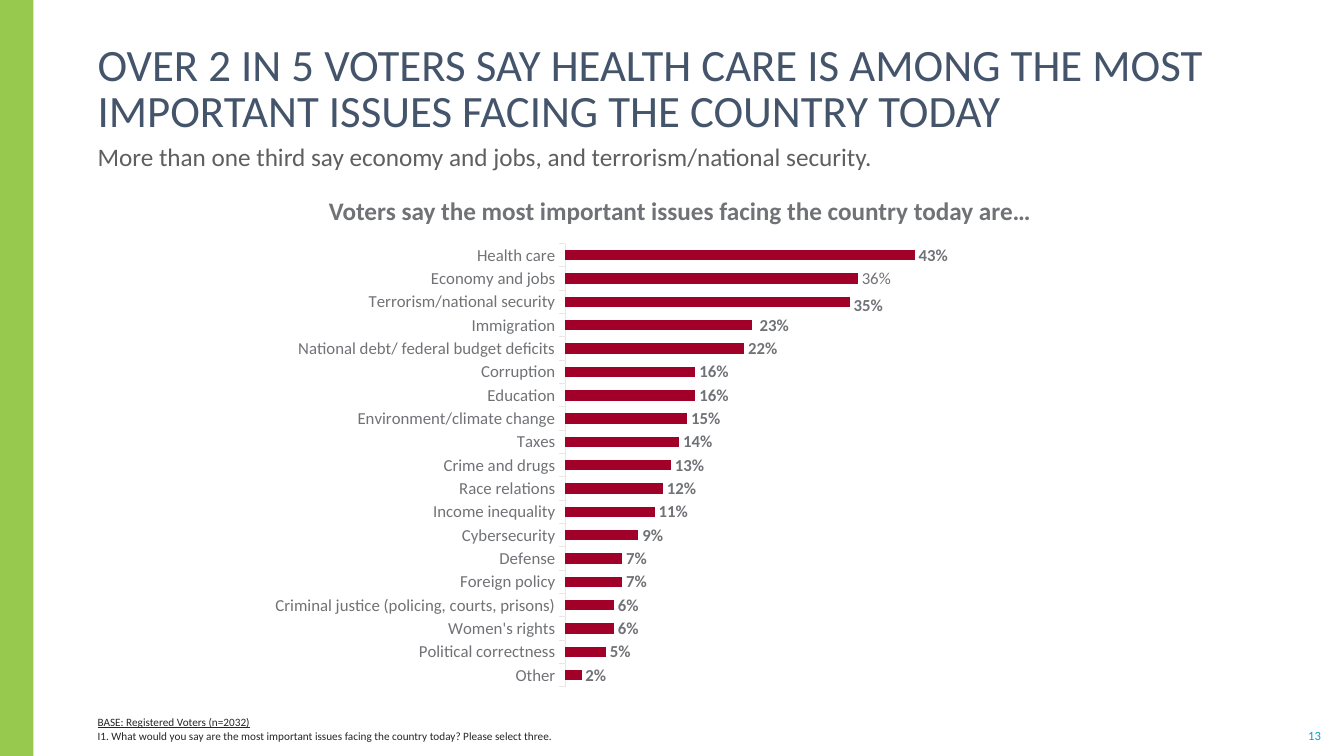
from dataclasses import dataclass

from lxml.etree import SubElement
from pptx import Presentation
from pptx.chart.data import CategoryChartData
from pptx.dml.color import RGBColor
from pptx.enum.chart import (XL_CHART_TYPE as ChartType, XL_LABEL_POSITION as LabelPos,
                             XL_TICK_MARK as TickMark)
from pptx.enum.shapes import MSO_SHAPE as Shape
from pptx.enum.text import MSO_ANCHOR as Anchor, PP_ALIGN as Align
from pptx.oxml.ns import qn
from pptx.util import Cm, Pt


@dataclass(frozen=True)
class Theme:
    font: str = "Calibri"
    band: str = "96C94D"
    title: str = "44546A"
    subtitle: str = "5F5F5F"
    chart_text: str = "707276"
    footnote: str = "262626"
    page: str = "009DD9"
    bar: str = "A10028"
    axis: str = "E7E7E7"
    title_size: float = 32
    body_size: float = 18
    label_size: float = 12
    page_size: float = 9
    footnote_size: float = 8


THEME = Theme()
WIDTH, HEIGHT = 33.87, 19.05
MARGIN, TEXT_WIDTH = 2.21, 30.25

ISSUES = [
    ("Health care", 0.43),
    ("Economy and jobs", 0.36),
    ("Terrorism/national security", 0.35),
    ("Immigration", 0.23),
    ("National debt/ federal budget deficits", 0.22),
    ("Corruption", 0.16),
    ("Education", 0.16),
    ("Environment/climate change", 0.15),
    ("Taxes", 0.14),
    ("Crime and drugs", 0.13),
    ("Race relations", 0.12),
    ("Income inequality", 0.11),
    ("Cybersecurity", 0.09),
    ("Defense", 0.07),
    ("Foreign policy", 0.07),
    ("Criminal justice (policing, courts, prisons)", 0.06),
    ("Women's rights", 0.06),
    ("Political correctness", 0.05),
    ("Other", 0.02),
]


def style_font(font, size, color, bold=False, underline=False):
    font.name = THEME.font
    font.size = Pt(size)
    font.color.rgb = RGBColor.from_string(color)
    font.bold = bold
    if underline:
        font.underline = True


def add_text(slide, box, *lines, size, color, bold=False, underline_first=False, align=Align.LEFT,
             anchor=Anchor.TOP, inset=0.25, spacing=None, space_before=0, wrap=True):
    tf = slide.shapes.add_textbox(*map(Cm, box)).text_frame
    tf.word_wrap = wrap
    tf.vertical_anchor = anchor
    tf.margin_left = tf.margin_right = Cm(inset)
    tf.margin_top = tf.margin_bottom = 0
    for i, line in enumerate(lines):
        p = tf.add_paragraph() if i else tf.paragraphs[0]
        p.alignment = align
        if spacing:
            p.line_spacing = spacing
        if i:
            p.space_before = Pt(space_before)
        r = p.add_run()
        r.text = line
        style_font(r.font, size, color, bold, underline_first and i == 0)


def add_frame(slide, box):
    """Draw the side band and the page number inside the slide's box."""
    left, top, width, height = box
    sp = slide.shapes.add_shape(Shape.RECTANGLE, Cm(left), Cm(top), Cm(0.84), Cm(height))
    sp.shadow.inherit = False
    sp.fill.solid()
    sp.fill.fore_color.rgb = RGBColor.from_string(THEME.band)
    sp.line.fill.background()
    add_text(slide, (left + width - 0.93, top + height - 0.71, 0.38, 0.38), "13",
             size=THEME.page_size, color=THEME.page, align=Align.CENTER,
             anchor=Anchor.MIDDLE, inset=0, wrap=False)


def add_header(slide, box):
    left, top, width, height = box
    title_height = 1.57
    add_text(slide, (left, top, width, title_height),
             "OVER 2 IN 5 VOTERS SAY HEALTH CARE IS AMONG THE MOST "
             "IMPORTANT ISSUES FACING THE COUNTRY TODAY",
             size=THEME.title_size, color=THEME.title, anchor=Anchor.BOTTOM, spacing=0.85)
    subtitle_top = title_height + 0.11
    add_text(slide, (left, top + subtitle_top, width, height - subtitle_top),
             "More than one third say economy and jobs, and terrorism/national security.",
             size=THEME.body_size, color=THEME.subtitle)


def set_layout(parent, index, **values):
    """Give a chart element a manual layout as its child number index."""
    for old in parent.findall(qn("c:layout")):
        parent.remove(old)
    layout = SubElement(parent, qn("c:layout"))
    parent.insert(index, layout)
    manual = SubElement(layout, qn("c:manualLayout"))
    for name, value in values.items():
        SubElement(manual, qn(f"c:{name}")).set("val", str(value))


def style_labels(series, categories):
    labels = series.data_labels
    labels.show_value = True
    labels.number_format = "0%"
    labels.number_format_is_linked = False
    labels.position = LabelPos.OUTSIDE_END
    style_font(labels.font, THEME.label_size, THEME.chart_text, bold=True)

    special = {"Economy and jobs": (False, None),
               "Terrorism/national security": (True, (0, 0.008)),
               "Immigration": (True, (0.003, 0))}
    for name, (bold, _) in special.items():
        label = series.points[categories.index(name)].data_label
        label.position = LabelPos.OUTSIDE_END
        style_font(label.font, THEME.label_size, THEME.chart_text, bold)
    for element in labels._element.findall(qn("c:dLbl")):
        name = categories[int(element.find(qn("c:idx")).get("val"))]
        offset = special[name][1]
        if offset:
            set_layout(element, 1, x=offset[0], y=offset[1])


def add_issue_chart(slide, box):
    left, top, width, height = box
    add_text(slide, (left + 1.9, top - 0.4, 18.64, 0.77),
             "Voters say the most important issues facing the country today are…",
             size=THEME.body_size, color=THEME.chart_text, bold=True, align=Align.CENTER,
             wrap=False)

    categories, values = zip(*reversed(ISSUES))
    data = CategoryChartData(number_format="0%")
    data.categories = categories
    data.add_series("Series 1", values)
    chart = slide.shapes.add_chart(ChartType.BAR_CLUSTERED, *map(Cm, box), data).chart
    chart.has_legend = chart.has_title = False
    style_font(chart.font, 10, THEME.subtitle)
    set_layout(chart._chartSpace.chart.plotArea, 0, layoutTarget="inner", xMode="edge",
               yMode="edge", x=0.287, y=0.067, w=0.706, h=0.901)

    axis = chart.category_axis
    axis.major_tick_mark = TickMark.OUTSIDE
    axis.format.line.color.rgb = RGBColor.from_string(THEME.axis)
    axis.format.line.width = Pt(0.75)
    style_font(axis.tick_labels.font, THEME.label_size, THEME.chart_text)
    scale = chart.value_axis
    scale.minimum_scale, scale.maximum_scale = 0, 1
    scale.has_major_gridlines = False
    scale.visible = False

    plot = chart.plots[0]
    plot.gap_width = 125
    plot.vary_by_categories = False
    series = plot.series[0]
    series.format.fill.solid()
    series.format.fill.fore_color.rgb = RGBColor.from_string(THEME.bar)
    style_labels(series, categories)


def add_footnote(slide, box):
    add_text(slide, box, "BASE: Registered Voters (n=2032)",
             "I1. What would you say are the most important issues facing the country today? "
             "Please select three.",
             size=THEME.footnote_size, color=THEME.footnote, underline_first=True,
             anchor=Anchor.BOTTOM, space_before=0.6)


def main():
    prs = Presentation()
    prs.slide_width, prs.slide_height = Cm(WIDTH), Cm(HEIGHT)
    slide = prs.slides.add_slide(prs.slide_layouts[6])
    add_frame(slide, (0, 0, WIDTH, HEIGHT))
    add_header(slide, (MARGIN, 1.88, TEXT_WIDTH, 2.54))
    add_issue_chart(slide, (5.92, 5.31, 29.01, 12.4))
    add_footnote(slide, (MARGIN, 17.7, TEXT_WIDTH, 1.02))
    prs.save("out.pptx")


if __name__ == "__main__":
    main()
